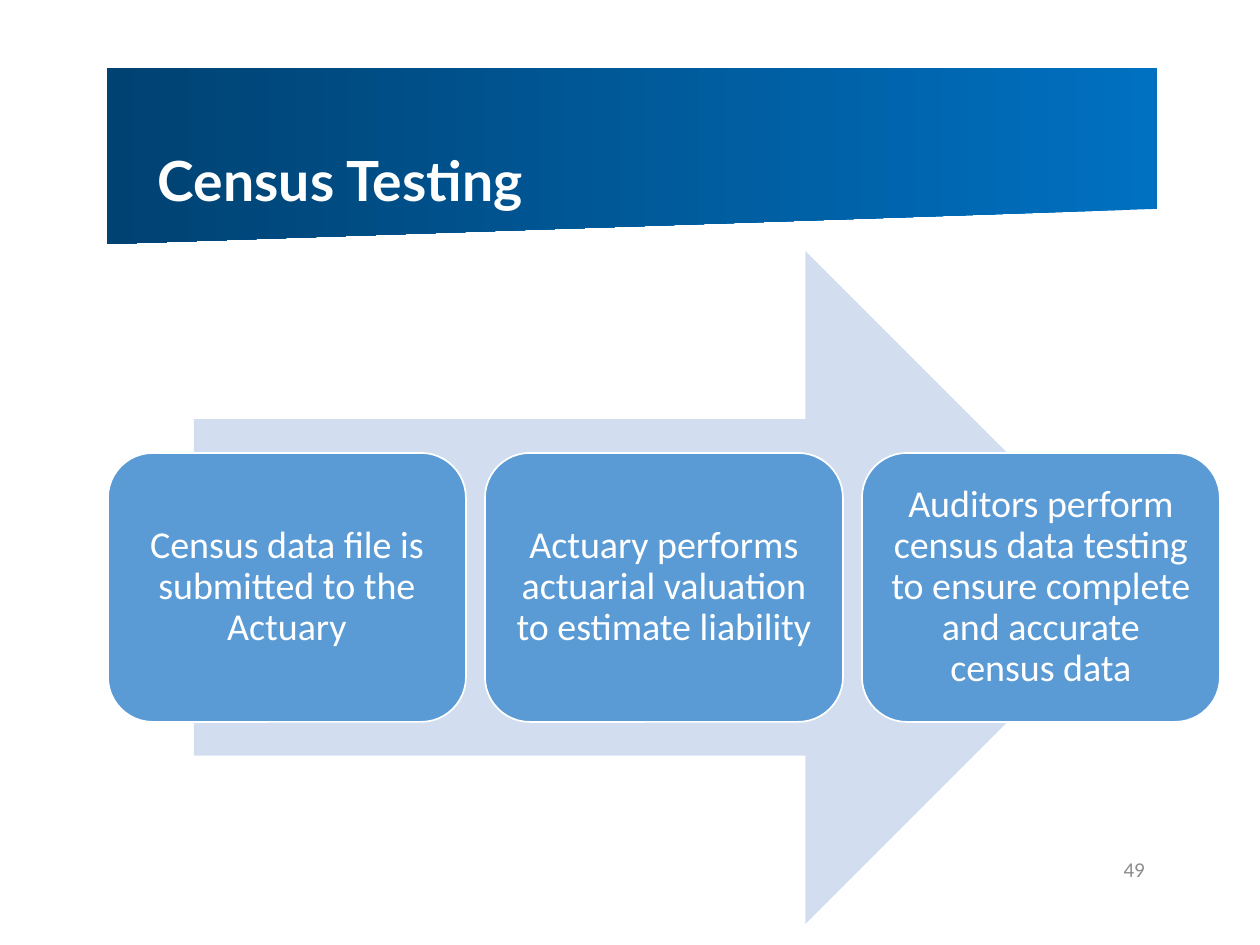
from dataclasses import dataclass

from pptx import Presentation
from pptx.dml.color import RGBColor
from pptx.enum.shapes import MSO_SHAPE as Shape
from pptx.enum.text import MSO_ANCHOR as Anchor, PP_ALIGN as Align
from pptx.util import Pt

EMU_PER_PX = 914400 / 124.4


def px(length):
    return round(length * EMU_PER_PX)


@dataclass(frozen=True)
class Theme:
    white: str = "FFFFFF"
    banner_dark: str = "004272"
    banner_light: str = "0070C0"
    arrow: str = "D2DEEF"
    step: str = "5B9BD5"
    muted: str = "8C8C8C"
    title_font: str = "Lato"
    body_font: str = "Calibri"
    title_size: float = 32
    step_size: float = 22
    number_size: float = 12.2


class ProcessSlide:
    def __init__(self, presentation, theme):
        self.theme = theme
        self.slide = presentation.slides.add_slide(presentation.slide_layouts[6])

    def shape(self, preset, box, color=None):
        shape = self.slide.shapes.add_shape(preset, *map(px, box))
        shape.shadow.inherit = False
        shape.line.fill.background()
        if color:
            shape.fill.solid()
            shape.fill.fore_color.rgb = RGBColor.from_string(color)
        return shape

    def set_text(self, shape, text, size, color, font, align, inset, bold=False):
        frame = shape.text_frame
        frame.word_wrap = True
        frame.vertical_anchor = Anchor.MIDDLE
        frame.margin_left = frame.margin_right = px(inset)
        frame.margin_top = frame.margin_bottom = px(inset)
        paragraph = frame.paragraphs[0]
        paragraph.text = text
        paragraph.alignment = align
        paragraph.line_spacing = 0.9
        paragraph.font.size = Pt(size)
        paragraph.font.name = font
        paragraph.font.bold = bold
        paragraph.font.color.rgb = RGBColor.from_string(color)

    def banner(self, box):
        banner = self.shape(Shape.FLOWCHART_MANUAL_INPUT, box)
        banner.rotation = 180
        banner.fill.gradient()
        banner.fill.gradient_angle = 0
        colors = (self.theme.banner_light, self.theme.banner_dark)
        for stop, position, color in zip(banner.fill.gradient_stops, (0, 1), colors):
            stop.position = position
            stop.color.rgb = RGBColor.from_string(color)

    def title(self, box, text):
        self.set_text(self.slide.shapes.add_textbox(*map(px, box)), text,
                      self.theme.title_size, self.theme.white, self.theme.title_font,
                      Align.LEFT, inset=12, bold=True)

    def page_number(self, box, text):
        self.set_text(self.slide.shapes.add_textbox(*map(px, box)), text,
                      self.theme.number_size, self.theme.muted, self.theme.body_font,
                      Align.RIGHT, inset=12)

    def arrow(self, box):
        self.shape(Shape.RIGHT_ARROW, box, self.theme.arrow)

    def step(self, box, text):
        step = self.shape(Shape.ROUNDED_RECTANGLE, box, self.theme.step)
        step.line.color.rgb = RGBColor.from_string(self.theme.white)
        step.line.width = Pt(1)
        self.set_text(step, text, self.theme.step_size, self.theme.white,
                      self.theme.body_font, Align.CENTER, inset=11)


STEPS = (
    "Census data file is submitted to the Actuary",
    "Actuary performs actuarial valuation to estimate liability",
    "Auditors perform census data testing to ensure complete and accurate census data",
)
STEP_LEFT, STEP_TOP, STEP_WIDTH, STEP_HEIGHT, STEP_GAP = 108, 453, 358, 269, 19


def main():
    presentation = Presentation()
    presentation.slide_width = px(1260)
    presentation.slide_height = px(945)

    census = ProcessSlide(presentation, Theme())
    census.banner((107, 68, 1050, 176))
    census.page_number((874, 846, 283, 50), "49")
    census.title((146, 117, 845, 134), "Census Testing")
    census.arrow((194, 251, 948, 673))
    for index, text in enumerate(STEPS):
        left = STEP_LEFT + index * (STEP_WIDTH + STEP_GAP)
        census.step((left, STEP_TOP, STEP_WIDTH, STEP_HEIGHT), text)

    presentation.save("out.pptx")


if __name__ == "__main__":
    main()
